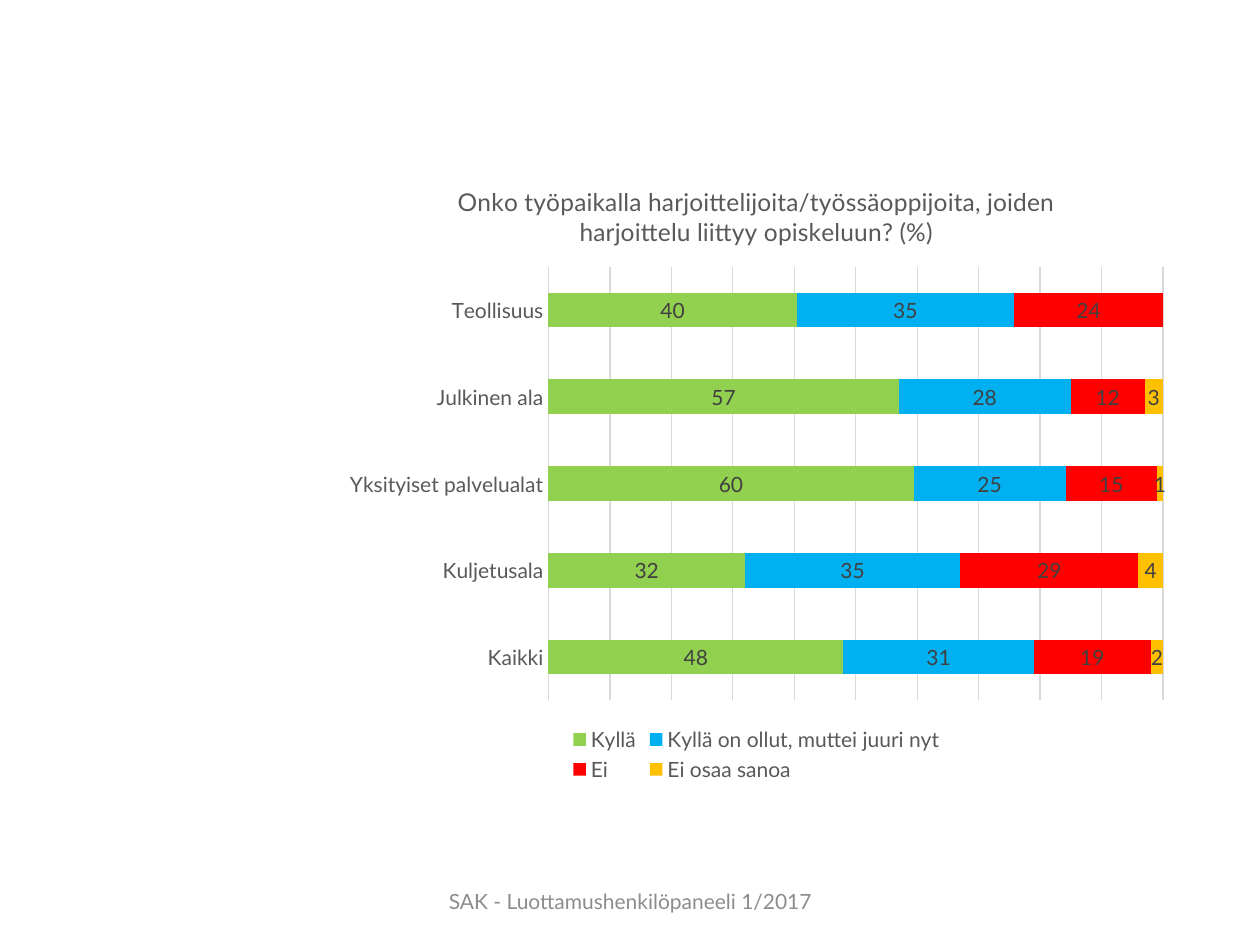
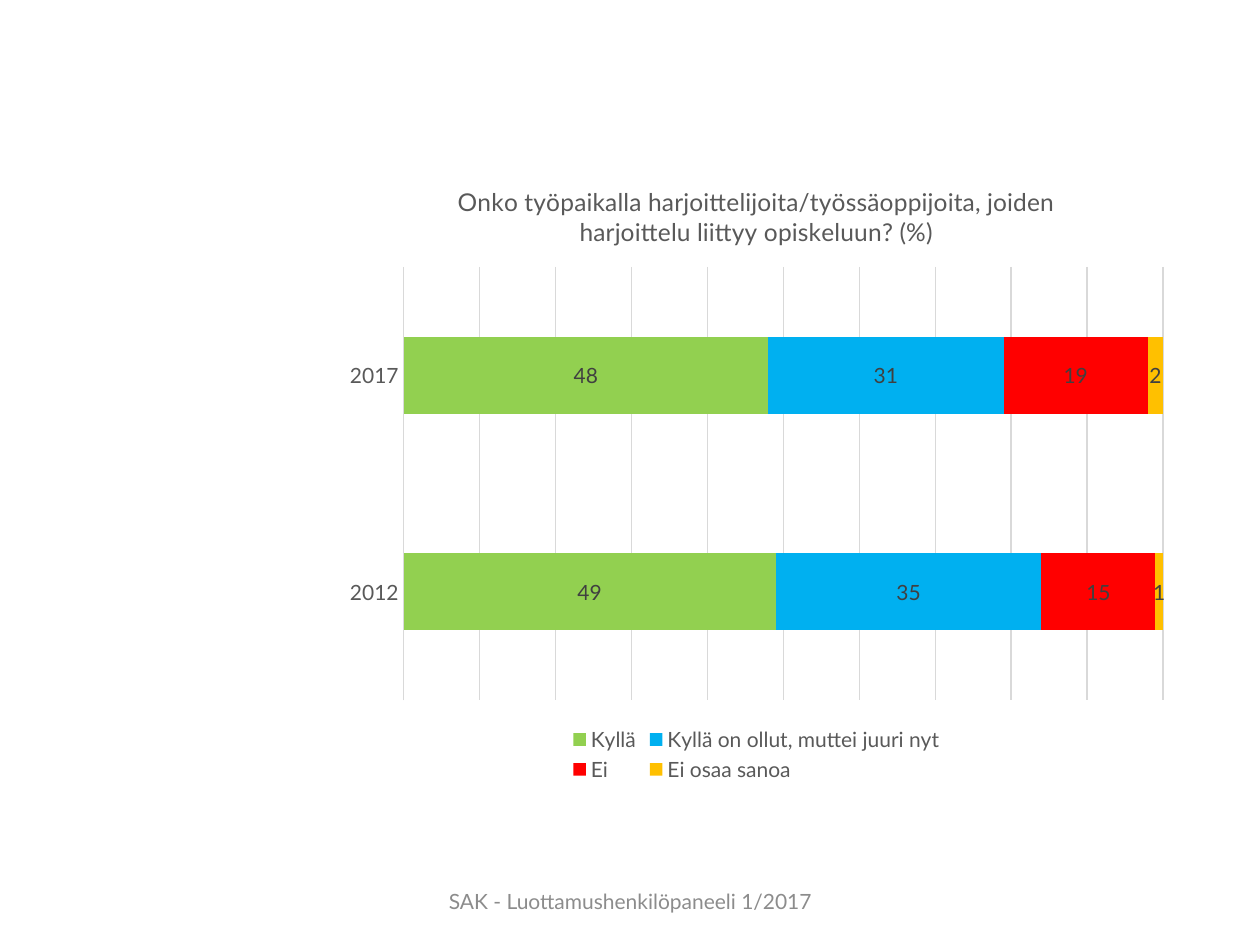
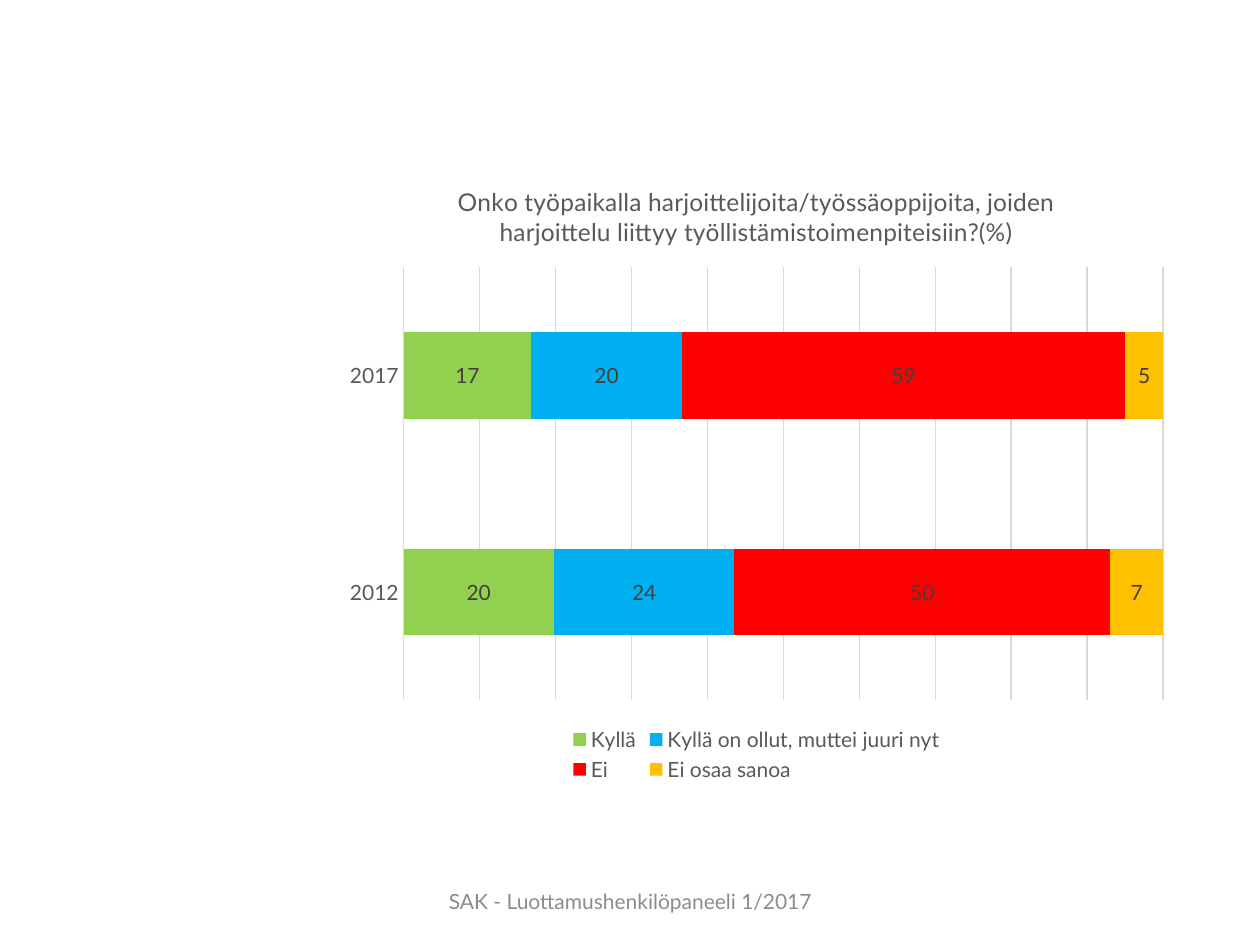
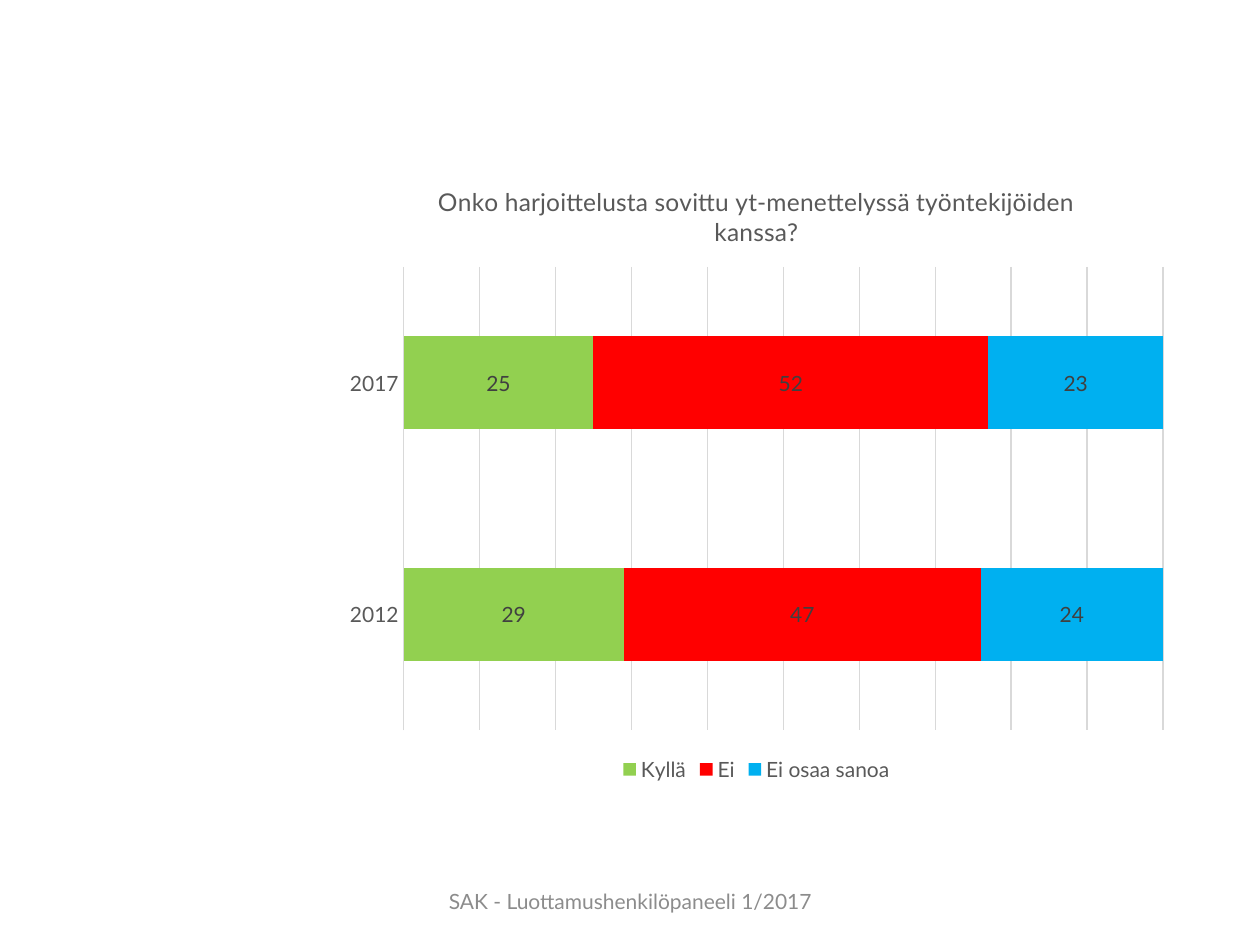
from collections import namedtuple

from pptx import Presentation
from pptx.chart.data import CategoryChartData
from pptx.dml.color import RGBColor
from pptx.enum.chart import (XL_CHART_TYPE, XL_LABEL_POSITION, XL_LEGEND_POSITION,
                             XL_TICK_LABEL_POSITION, XL_TICK_MARK)
from pptx.enum.text import MSO_ANCHOR, PP_ALIGN
from pptx.util import Emu, Pt

PX = 914400 / 126
FONT = "Lato"
GREEN, BLUE, RED, AMBER = "92D050", "00B0F0", "FF0000", "FFC000"
TEXT, LABEL, FOOTER, GRID = "595959", "404040", "8C8C8C", "D9D9D9"

CHART_BOX = (333, 160, 847, 627)
FOOTER_BOX = (431, 876, 399, 50)
FOOTER_TEXT = "SAK - Luottamushenkilöpaneeli 1/2017"

YES, BEEN, NO, UNSURE = "Kyllä", "Kyllä on ollut, muttei juuri nyt", "Ei", "Ei osaa sanoa"
FOUR_COLOURS = (GREEN, BLUE, RED, AMBER)
YEARS = ("2012", "2017")
STUDY_QUESTION = ("Onko työpaikalla harjoittelijoita/työssäoppijoita, "
                  "joiden harjoittelu liittyy opiskeluun? (%)")

Survey = namedtuple("Survey", "question groups answers colours gap reverse", defaults=(150, False))

SURVEYS = (
    Survey(STUDY_QUESTION,
           ("Teollisuus", "Julkinen ala", "Yksityiset palvelualat", "Kuljetusala", "Kaikki"),
           {YES: (40, 57, 60, 32, 48), BEEN: (35, 28, 25, 35, 31),
            NO: (24, 12, 15, 29, 19), UNSURE: (None, 3, 1, 4, 2)},
           FOUR_COLOURS, reverse=True),
    Survey(STUDY_QUESTION, YEARS,
           {YES: (49, 48), BEEN: (35, 31), NO: (15, 19), UNSURE: (1, 2)},
           FOUR_COLOURS, gap=182),
    Survey("Onko työpaikalla harjoittelijoita/työssäoppijoita, "
           "joiden harjoittelu liittyy työllistämistoimenpiteisiin?(%)", YEARS,
           {YES: (20, 17), BEEN: (24, 20), NO: (50, 59), UNSURE: (7, 5)},
           FOUR_COLOURS),
    Survey("Onko harjoittelusta sovittu yt-menettelyssä työntekijöiden kanssa?", YEARS,
           {YES: (29, 25), NO: (47, 52), UNSURE: (24, 23)},
           (GREEN, RED, BLUE)),
)


def px(*lengths):
    return [Emu(round(length * PX)) for length in lengths]


def rgb(colour):
    return RGBColor.from_string(colour)


def style_font(font, size, colour):
    for name, value in {"name": FONT, "size": Pt(size), "bold": False}.items():
        setattr(font, name, value)
    font.color.rgb = rgb(colour)


def style_line(line, colour):
    line.color.rgb = rgb(colour)
    line.width = Pt(0.75)


def add_footer(slide, box):
    frame = slide.shapes.add_textbox(*px(*box)).text_frame
    frame.word_wrap = True
    frame.vertical_anchor = MSO_ANCHOR.MIDDLE
    credit = frame.paragraphs[0]
    credit.alignment = PP_ALIGN.CENTER
    run = credit.add_run()
    run.text = FOOTER_TEXT
    style_font(run.font, 12, FOOTER)


def style_title(chart, question):
    chart.has_title = True
    chart.chart_title.include_in_layout = False
    run = chart.chart_title.text_frame.paragraphs[0].add_run()
    run.text = question
    style_font(run.font, 14, TEXT)


def style_axes(chart, reverse):
    groups, shares = chart.category_axis, chart.value_axis
    for name, value in {"major_tick_mark": XL_TICK_MARK.NONE,
                        "minor_tick_mark": XL_TICK_MARK.NONE,
                        "tick_label_position": XL_TICK_LABEL_POSITION.NEXT_TO_AXIS,
                        "reverse_order": reverse}.items():
        setattr(groups, name, value)
    style_font(groups.tick_labels.font, 12, TEXT)
    style_line(groups.format.line, GRID)
    shares.visible = False
    shares.has_major_gridlines = True
    style_line(shares.major_gridlines.format.line, GRID)


def style_bars(plot, colours, gap):
    for name, value in {"gap_width": gap, "overlap": 100, "vary_by_categories": False}.items():
        setattr(plot, name, value)
    for answer, colour in zip(plot.series, colours):
        answer.format.fill.solid()
        answer.format.fill.fore_color.rgb = rgb(colour)
        labels = answer.data_labels
        labels.show_value = True
        labels.position = XL_LABEL_POSITION.CENTER
        style_font(labels.font, 12, LABEL)


def style_legend(chart):
    chart.has_legend = True
    chart.legend.position = XL_LEGEND_POSITION.BOTTOM
    chart.legend.include_in_layout = False
    style_font(chart.legend.font, 12, TEXT)


def add_survey_chart(slide, box, survey):
    shares = CategoryChartData()
    shares.categories = survey.groups
    for answer, values in survey.answers.items():
        shares.add_series(answer, values)
    chart = slide.shapes.add_chart(XL_CHART_TYPE.BAR_STACKED_100, *px(*box), shares).chart
    style_font(chart.font, 10, "000000")
    style_title(chart, survey.question)
    style_axes(chart, survey.reverse)
    style_bars(chart.plots[0], survey.colours, survey.gap)
    style_legend(chart)


def main():
    deck = Presentation()
    deck.slide_width, deck.slide_height = px(1260, 945)
    for survey in SURVEYS:
        slide = deck.slides.add_slide(deck.slide_layouts[6])
        add_footer(slide, FOOTER_BOX)
        add_survey_chart(slide, CHART_BOX, survey)
    deck.save("out.pptx")


if __name__ == "__main__":
    main()
